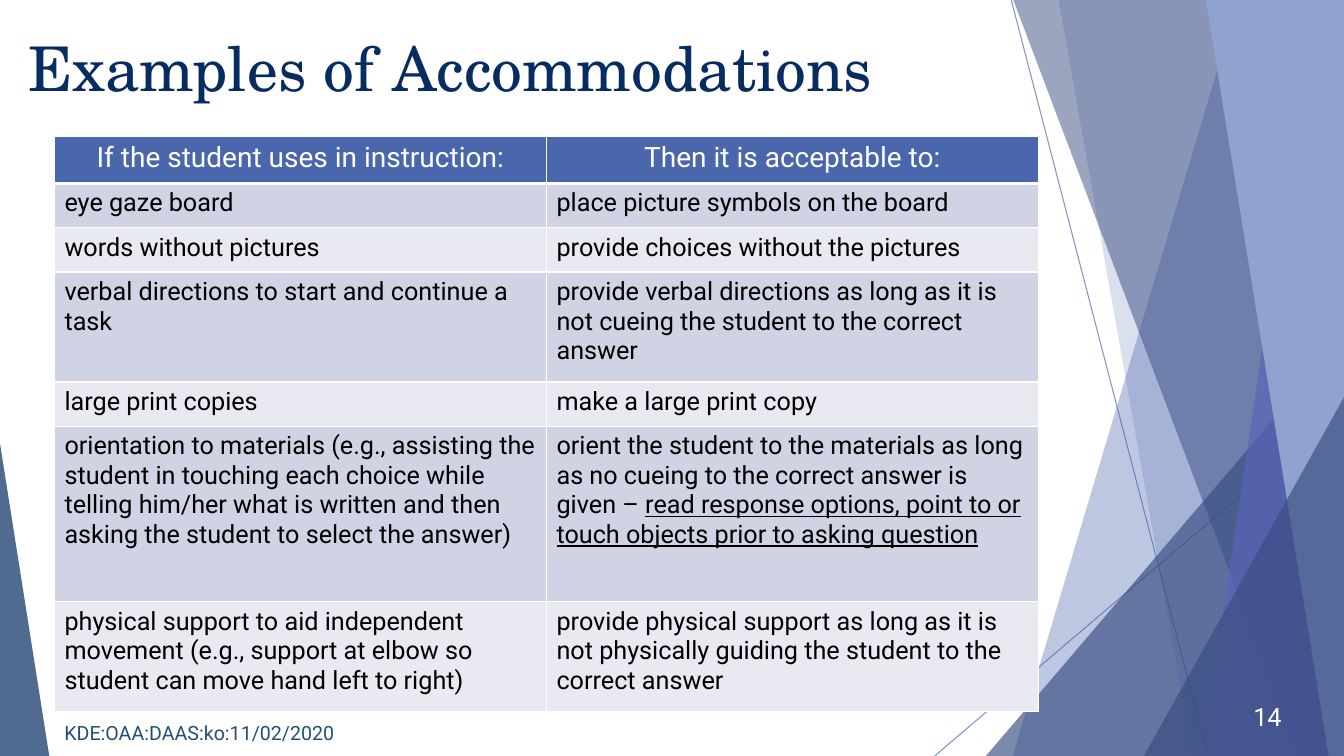
from lxml import etree
from pptx import Presentation
from pptx.dml.color import RGBColor
from pptx.enum.shapes import MSO_CONNECTOR, MSO_SHAPE
from pptx.enum.text import MSO_ANCHOR, PP_ALIGN
from pptx.oxml.ns import qn
from pptx.util import Inches, Pt

LINE = MSO_CONNECTOR.STRAIGHT
WEDGE = MSO_SHAPE.ISOSCELES_TRIANGLE
TOP, MIDDLE = MSO_ANCHOR.TOP, MSO_ANCHOR.MIDDLE
LEFT, CENTER, RIGHT = PP_ALIGN.LEFT, PP_ALIGN.CENTER, PP_ALIGN.RIGHT

WHITE = RGBColor(0xFF, 0xFF, 0xFF)
BLACK = RGBColor(0, 0, 0)
BLUE = RGBColor(0x4A, 0x66, 0xAC)
DEEP = RGBColor(0x38, 0x4C, 0x81)
VIOLET = RGBColor(0x5C, 0x64, 0xB7)
PALE = RGBColor(0x90, 0xA2, 0xCF)
NAVY = RGBColor(0x07, 0x2C, 0x62)
STEEL = RGBColor(0x23, 0x4F, 0x77)
DARK_ROW = RGBColor(0xD0, 0xD3, 0xE3)
LIGHT_ROW = RGBColor(0xE9, 0xEA, 0xF1)

SANS, SERIF = "Roboto", "TeX Gyre Schola"
WIDE, HIGH, BASE = 13.33, 7.5, 7.51

HEADS = ("If the student uses in instruction:", "Then it is acceptable to:")
# Row height, left text, right text, underlined end of the right text
ROWS = [
    (0.44, "eye gaze board", "place picture symbols on the board", ""),
    (0.44, "words without pictures", "provide choices without the pictures", ""),
    (1.09, "verbal directions to start and continue a task",
     "provide verbal directions as long as it is not cueing the student "
     "to the correct answer", ""),
    (0.44, "large print copies", "make a large print copy", ""),
    (1.74, "orientation to materials (e.g., assisting the student in touching "
     "each choice while telling him/her what is written and then asking the "
     "student to select the answer)",
     "orient the student to the materials as long as no cueing to the "
     "correct answer is given – ",
     "read response options, point to or touch objects prior to asking question"),
    (1.09, "physical support to aid independent movement (e.g., support at "
     "elbow so student can move hand left to right)",
     "provide physical support as long as it is not physically guiding the "
     "student to the correct answer", ""),
]


def fade(fill, percent):
    """Set the opacity of a solid fill's colour element."""
    tint = fill.find(qn("a:srgbClr"))
    etree.SubElement(tint, qn("a:alpha"), val=str(percent * 1000))


def paint(shape, color, percent):
    shape.shadow.inherit = False
    shape.fill.solid()
    shape.fill.fore_color.rgb = color
    shape.line.fill.background()
    if percent < 100:
        fade(shape.element.spPr.find(qn("a:solidFill")), percent)


def add_line(slide, *ends):
    line = slide.shapes.add_connector(LINE, *map(Inches, ends))
    line.line.color.rgb = BLUE
    line.line.width = Pt(0.75)
    props = line.element.spPr
    fade(props.find(qn("a:ln")).find(qn("a:solidFill")), 70)
    etree.SubElement(props, qn("a:effectLst"))


def add_band(slide, top, base, color, percent):
    """Fill from a slanted left edge to the right side of the slide."""
    spots = [(WIDE, 0), (WIDE, BASE), (base, BASE)]
    pen = slide.shapes.build_freeform(Inches(top), 0)
    pen.add_line_segments([(Inches(x), Inches(y)) for x, y in spots])
    paint(pen.convert_to_shape(), color, percent)


def add_wedge(slide, left, top, width, peak, color, percent):
    box = map(Inches, (left, top, width, BASE - top))
    wedge = slide.shapes.add_shape(WEDGE, *box)
    wedge.adjustments[0] = peak
    paint(wedge, color, percent)


def style(par, size, color, align=LEFT, face=SANS):
    par.alignment = align
    for run in par.runs:
        run.font.size = Pt(size)
        run.font.name = face
        run.font.color.rgb = color


def add_text(slide, box, text, size, color, align=LEFT, face=SANS, anchor=MIDDLE):
    frame = slide.shapes.add_textbox(*map(Inches, box)).text_frame
    frame.word_wrap = True
    frame.vertical_anchor = anchor
    frame.text = text
    style(frame.paragraphs[0], size, color, align, face)


def fill_cell(cell, text, size, color, back, align=LEFT, tail="", rule=1):
    par = cell.text_frame.paragraphs[0]
    par.text = text
    if tail:
        run = par.add_run()
        run.text = tail
        run.font.underline = True
    style(par, size, color, align)
    # Borders come before the fill in the cell properties
    props = cell._tc.get_or_add_tcPr()
    for side, width in (("lnL", 1), ("lnR", 1), ("lnT", 1), ("lnB", rule)):
        edge = etree.SubElement(props, qn("a:" + side), w=str(Pt(width)))
        solid = etree.SubElement(edge, qn("a:solidFill"))
        etree.SubElement(solid, qn("a:srgbClr"), val=str(WHITE))
    cell.fill.solid()
    cell.fill.fore_color.rgb = back


def add_grid(slide):
    box = map(Inches, (0.54, 1.35, 9.76, 5.72))
    grid = slide.shapes.add_table(len(ROWS) + 1, 2, *box).table
    for col in grid.columns:
        col.width = Inches(4.88)
    grid.rows[0].height = Inches(0.47)
    for i, head in enumerate(HEADS):
        fill_cell(grid.cell(0, i), head, 20, WHITE, BLUE, CENTER, rule=3)
    for i, (height, use, then, tail) in enumerate(ROWS, 1):
        back = DARK_ROW if i % 2 else LIGHT_ROW
        grid.rows[i].height = Inches(height)
        fill_cell(grid.cell(i, 0), use, 18, BLACK, back)
        fill_cell(grid.cell(i, 1), then, 18, BLACK, back, tail=tail)


def add_facets(slide):
    add_line(slide, 10.03, 0, 11.98, HIGH)
    add_line(slide, WIDE, 4.04, 9.27, HIGH)
    add_band(slide, 12.28, 10.04, BLUE, 36)
    add_band(slide, 10.5, 11.83, BLUE, 20)
    add_wedge(slide, 9.77, 3.34, 3.56, 1, DEEP, 66)
    add_band(slide, 10.05, 12.89, DEEP, 50)
    add_band(slide, 13.03, 11.92, VIOLET, 70)
    add_band(slide, 11.96, 13.18, PALE, 100)
    add_wedge(slide, 11.34, 3.94, 1.99, 1, DEEP, 66)
    add_wedge(slide, 0, 4.4, 0.49, 0, NAVY, 70)


def main():
    deck = Presentation()
    deck.slide_width, deck.slide_height = Inches(WIDE), Inches(HIGH)
    slide = deck.slides.add_slide(deck.slide_layouts[6])
    # Background facets
    add_facets(slide)
    # Title and page number
    add_text(slide, (0.18, 0.25, 9.62, 0.97), "Examples of Accommodations",
             44, NAVY, face=SERIF, anchor=TOP)
    add_text(slide, (12.06, 6.91, 0.75, 0.4), "14", 18, WHITE, RIGHT)
    # Accommodations table
    add_grid(slide)
    # Footer
    add_text(slide, (0.54, 7.07, 4.5, 0.4), "KDE:OAA:DAAS:ko:11/02/2020", 14, STEEL)
    deck.save("out.pptx")


if __name__ == "__main__":
    main()
